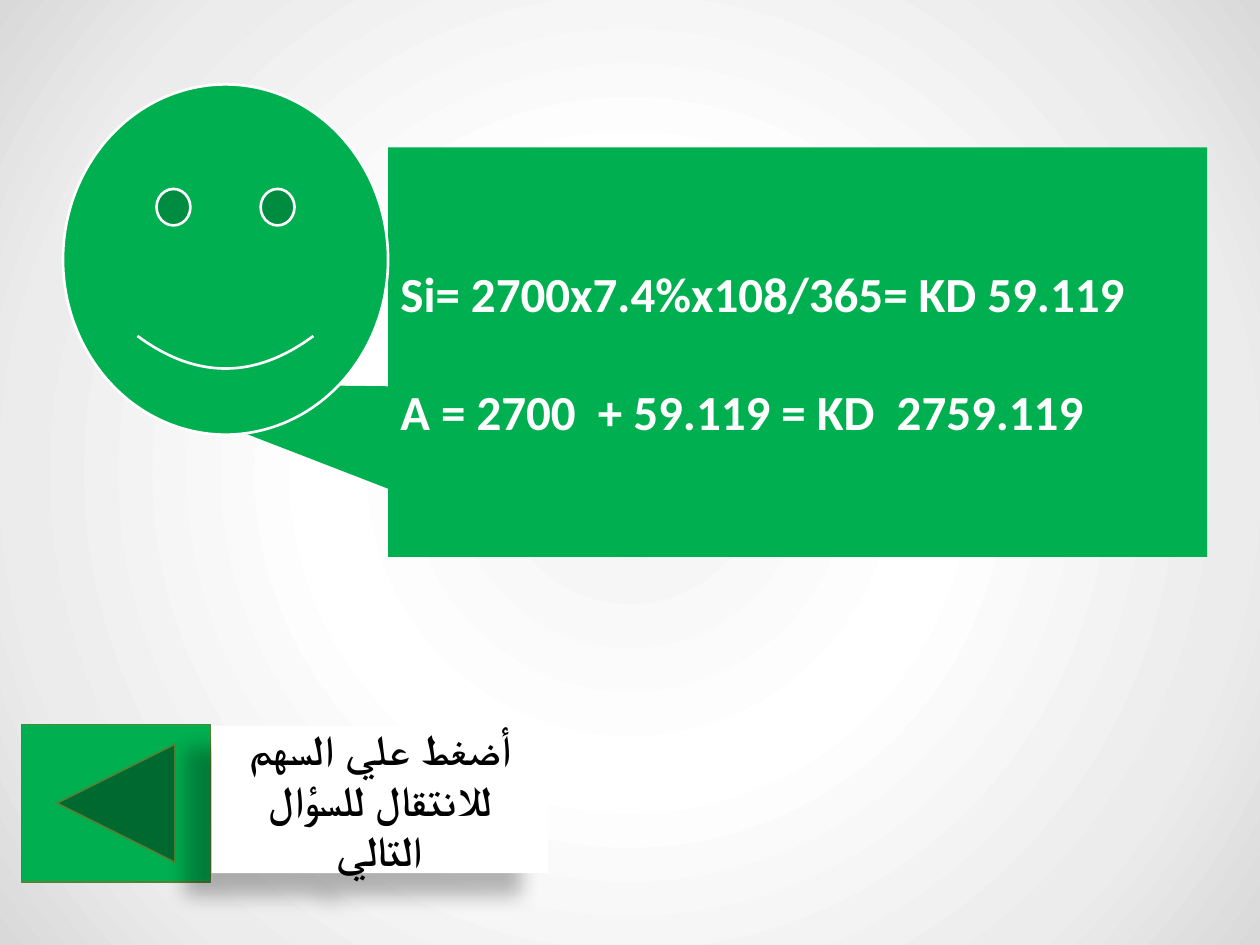
from lxml import etree
from pptx import Presentation
from pptx.dml.color import RGBColor
from pptx.enum.shapes import MSO_SHAPE
from pptx.enum.text import MSO_ANCHOR, PP_ALIGN
from pptx.oxml import parse_xml
from pptx.util import Inches, Pt

CALLOUT = MSO_SHAPE.RECTANGULAR_CALLOUT
SMILEY = MSO_SHAPE.SMILEY_FACE
BACK = MSO_SHAPE.ACTION_BUTTON_BACK_OR_PREVIOUS
RECT = MSO_SHAPE.RECTANGLE
LEFT, CENTER = PP_ALIGN.LEFT, PP_ALIGN.CENTER
MIDDLE = MSO_ANCHOR.MIDDLE
NS = "http://schemas.openxmlformats.org/drawingml/2006/main"

# Content
ANSWER = ["Si= 2700x7.4%x108/365= KD 59.119",
          "A = 2700  + 59.119 = KD  2759.119"]
HINT = ["أضغط علي السهم للانتقال للسؤال التالي"]


class Theme:
    font = "Calibri"
    green, olive, white, black = "00B050", "548235", "FFFFFF", "000000"
    answer_size, hint_size = 28, 24
    backdrop = [(0, "F2F2F2"), (39, "FFFFFF"), (78, "ECECEC"), (100, "D9D9D9")]


def rgb(value):
    return RGBColor.from_string(value)


def set_backdrop(slide, stops):
    fill = slide.background.fill
    fill.gradient()
    grad = slide.element.find(f".//{{{NS}}}gradFill")
    gs = "".join(f'<a:gs pos="{pos * 1000}"><a:srgbClr val="{color}"/></a:gs>'
                 for pos, color in stops)
    radial = parse_xml(
        f'<a:gradFill xmlns:a="{NS}" rotWithShape="1"><a:gsLst>{gs}</a:gsLst>'
        '<a:path path="circle"><a:fillToRect l="50000" t="50000" r="50000" '
        'b="50000"/></a:path></a:gradFill>')
    grad.getparent().replace(grad, radial)


def add_figure(slide, kind, box, fill, line=None, width=1, adj=()):
    sp = slide.shapes.add_shape(kind, *map(Inches, box))
    sp.shadow.inherit = False
    sp.fill.solid()
    sp.fill.fore_color.rgb = rgb(fill)
    if line:
        sp.line.color.rgb = rgb(line)
        sp.line.width = Pt(width)
    else:
        sp.line.fill.background()
    for i, value in enumerate(adj):
        sp.adjustments[i] = value
    return sp


def write(sp, lines, size, color, align, gap=0):
    tf = sp.text_frame
    tf.word_wrap = True
    tf.vertical_anchor = MIDDLE
    tf.text = "\n".join(lines)
    for i, p in enumerate(tf.paragraphs):
        p.alignment = align
        p.space_before = Pt(gap if i else 0)
        for r in p.runs:
            r.font.name = Theme.font
            r.font.size = Pt(size)
            r.font.bold = True
            r.font.color.rgb = rgb(color)
    return tf.paragraphs


def add_shadow(sp, color, alpha, blur, dist, angle):
    effects = sp.element.spPr.find(f"{{{NS}}}effectLst")
    shadow = etree.SubElement(
        effects, f"{{{NS}}}outerShdw", blurRad=str(Pt(blur)),
        dist=str(Pt(dist)), dir=str(angle * 60000), rotWithShape="0")
    clr = etree.SubElement(shadow, f"{{{NS}}}srgbClr", val=color)
    etree.SubElement(clr, f"{{{NS}}}alpha", val=str(alpha * 1000))


def main():
    prs = Presentation()
    prs.slide_width, prs.slide_height = Inches(10), Inches(7.5)
    slide = prs.slides.add_slide(prs.slide_layouts[6])
    set_backdrop(slide, Theme.backdrop)

    # Smiley speaking the answer
    callout = add_figure(slide, CALLOUT, (3.08, 1.17, 6.5, 3.25), Theme.green,
                         adj=(-0.834, 0.075))
    for p in write(callout, ANSWER, Theme.answer_size, Theme.white, LEFT, gap=34):
        pPr = p._p.get_or_add_pPr()
        pPr.set("marL", str(Inches(0.38)))
        pPr.set("indent", str(-Inches(0.38)))
    add_figure(slide, SMILEY, (0.5, 0.67, 2.58, 2.78), Theme.green,
               Theme.white, 1.5, adj=(0.047,))

    # Arrow button and its hint
    add_figure(slide, BACK, (0.17, 5.75, 1.5, 1.25), Theme.green, Theme.olive)
    hint = add_figure(slide, RECT, (1.68, 5.76, 2.67, 1.17), Theme.white)
    add_shadow(hint, Theme.black, alpha=28, blur=11.8, dist=19.7, angle=141)
    for p in write(hint, HINT, Theme.hint_size, Theme.black, CENTER):
        p._p.get_or_add_pPr().set("rtl", "1")

    prs.save("out.pptx")


if __name__ == "__main__":
    main()
